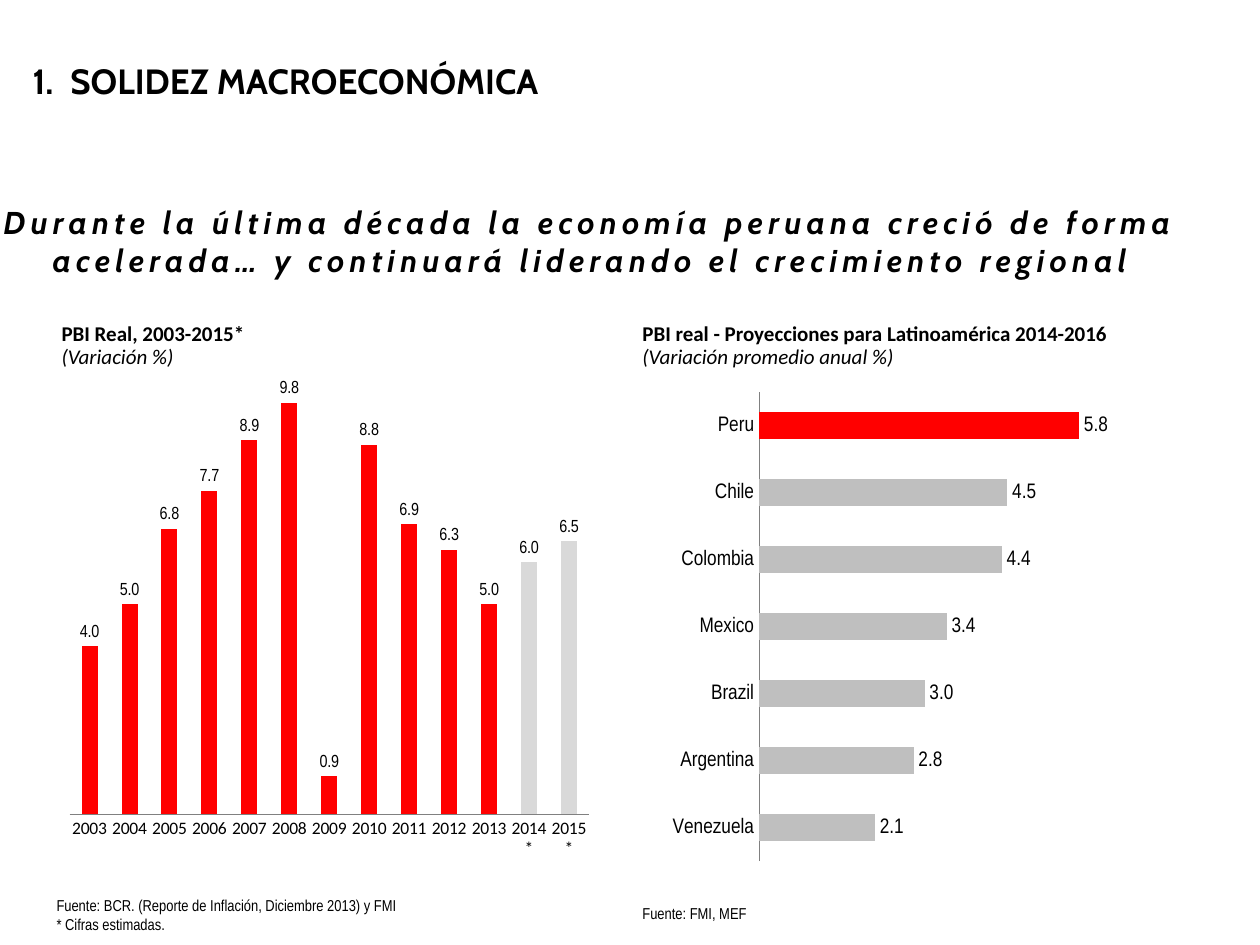
from lxml import etree
from pptx import Presentation
from pptx import util as u
from pptx.chart import data as chart_data
from pptx.dml.color import RGBColor
from pptx.enum import chart as ch, text
from pptx.oxml import ns

BLACK = RGBColor(0x00, 0x00, 0x00)
RED = RGBColor(0xFF, 0x00, 0x00)
LIGHT_GREY = RGBColor(0xD9, 0xD9, 0xD9)
MID_GREY = RGBColor(0xBF, 0xBF, 0xBF)
AXIS_GREY = RGBColor(0x80, 0x80, 0x80)

# Grid of 100 columns by 75 rows; every box is (column, row, columns, rows)
COLUMNS, ROWS = 100, 75
prs = Presentation()
prs.slide_width, prs.slide_height = u.Inches(10), u.Inches(7.5)


def place(box):
    col, row, cols, rows = box
    col_width, row_height = prs.slide_width / COLUMNS, prs.slide_height / ROWS
    return (u.Emu(round(col * col_width)), u.Emu(round(row * row_height)),
            u.Emu(round(cols * col_width)), u.Emu(round(rows * row_height)))


def inside(box, part):
    """Grid box of a part given relative to its region."""
    return (box[0] + part[0], box[1] + part[1], part[2], part[3])


def set_font(font, name, size, bold=False, italic=False):
    font.name, font.size = name, u.Pt(size)
    font.bold, font.italic = bold, italic
    font.color.rgb = BLACK


def add_lines(slide, box, lines, name, size, styles=((False, False),),
              line_spacing=None, grow=True):
    """Text box with one paragraph a line; styles are (bold, italic) by line."""
    frame = slide.shapes.add_textbox(*place(box)).text_frame
    frame.word_wrap = True
    frame.auto_size = (text.MSO_AUTO_SIZE.SHAPE_TO_FIT_TEXT if grow
                       else text.MSO_AUTO_SIZE.NONE)
    frame.text = "\n".join(lines)
    for i, paragraph in enumerate(frame.paragraphs):
        paragraph.line_spacing = line_spacing
        for run in paragraph.runs:
            set_font(run.font, name, size, *styles[i % len(styles)])
    return frame


def add_title(slide, box):
    frame = add_lines(slide, box, ["SOLIDEZ MACROECONÓMICA"], "Cabin", 20,
                      [(True, False)], grow=False)
    frame.vertical_anchor = text.MSO_ANCHOR.MIDDLE
    properties = frame.paragraphs[0]._p.get_or_add_pPr()
    indent = u.Inches(0.3)
    properties.set("marL", str(indent))
    properties.set("indent", str(-indent))
    numbering = etree.SubElement(properties, ns.qn("a:buAutoNum"))
    numbering.set("type", "arabicPeriod")


def add_message(slide, box):
    message = ("Durante la última década la economía peruana creció de forma "
               "acelerada… y continuará liderando el crecimiento regional")
    frame = add_lines(slide, box, [message], "Cabin", 18, [(True, True)])
    frame.vertical_anchor = text.MSO_ANCHOR.MIDDLE
    paragraph = frame.paragraphs[0]
    paragraph.alignment = text.PP_ALIGN.CENTER
    paragraph.runs[0].font._element.set("spc", "300")


def set_plot_layout(chart, shares):
    """Fix the inner plot area at x, y, w, h shares of the chart."""
    plot_area = chart._chartSpace.chart.plotArea
    for old in plot_area.findall(ns.qn("c:layout")):
        plot_area.remove(old)
    layout = etree.Element(ns.qn("c:layout"))
    manual = etree.SubElement(layout, ns.qn("c:manualLayout"))
    settings = [("layoutTarget", "inner"), ("xMode", "edge"), ("yMode", "edge"),
                *zip("xywh", shares)]
    for tag, value in settings:
        etree.SubElement(manual, ns.qn(f"c:{tag}")).set("val", str(value))
    plot_area.insert(0, layout)


def add_growth_chart(slide, box, kind, growth, size, maximum, color,
                     highlights, highlight_color, plot_shares, axis_font):
    values = chart_data.CategoryChartData(number_format="0.0")
    values.categories = list(growth)
    values.add_series("Series 1", list(growth.values()))
    chart = slide.shapes.add_chart(kind, *place(box), values).chart
    chart.has_legend = chart.has_title = False
    set_font(chart.font, "Arial Narrow", size)
    set_plot_layout(chart, plot_shares)

    # Axes
    chart.value_axis.visible = False
    chart.value_axis.has_major_gridlines = False
    chart.value_axis.minimum_scale = 0
    chart.value_axis.maximum_scale = maximum
    categories = chart.category_axis
    categories.major_tick_mark = ch.XL_TICK_MARK.NONE
    categories.format.line.color.rgb = AXIS_GREY
    categories.format.line.width = u.Pt(0.25)
    set_font(categories.tick_labels.font, axis_font, size)

    # Bars and their labels
    plot = chart.plots[0]
    plot.gap_width = 150
    plot.vary_by_categories = False
    series = plot.series[0]
    series.invert_if_negative = False
    series.format.fill.solid()
    series.format.fill.fore_color.rgb = color
    for name in highlights:
        fill = series.points[list(growth).index(name)].format.fill
        fill.solid()
        fill.fore_color.rgb = highlight_color
    labels = series.data_labels
    labels.show_value = True
    labels.number_format = "#,##0.0"
    labels.number_format_is_linked = False
    labels.position = ch.XL_LABEL_POSITION.OUTSIDE_END
    set_font(labels.font, "Arial Narrow", size)


def add_panel(slide, box, heading, heading_box, sources, source_box,
              chart_box, **chart_options):
    """Heading, chart and source note of one half of the slide."""
    add_growth_chart(slide, inside(box, chart_box), **chart_options)
    add_lines(slide, inside(box, heading_box), heading, "Calibri", 12,
              [(True, False), (False, True)], line_spacing=0.9)
    add_lines(slide, inside(box, source_box), sources, "Arial Narrow", 9)


def main():
    slide = prs.slides.add_slide(prs.slide_layouts[6])
    add_message(slide, (-1.2, 15.6, 96.1, 7.1))
    add_title(slide, (1.6, 2.5, 52.1, 7.7))

    # Growth of Peru by year
    years = [*range(2003, 2014), "2014*", "2015*"]
    rates = [4, 5, 6.8, 7.7, 8.9, 9.8, 0.9, 8.8, 6.9, 6.3, 5, 6, 6.5]
    add_panel(
        slide, (3.5, 25.2, 46.5, 49.8),
        ["PBI Real, 2003-2015*", "(Variación %)"], (0.4, 0, 45.3, 4.6),
        ["Fuente: BCR. (Reporte de Inflación, Diciembre 2013) y FMI",
         "* Cifras estimadas."], (0, 45.4, 49.2, 4),
        (1.6, 4.1, 42.5, 39.7), kind=ch.XL_CHART_TYPE.COLUMN_CLUSTERED,
        growth=dict(zip(map(str, years), rates)), size=10, maximum=10,
        color=RED, highlights=["2014*", "2015*"], highlight_color=LIGHT_GREY,
        plot_shares=(0.01, 0.05, 0.97, 0.84), axis_font="Calibri")

    # Projections by country
    projections = {"Venezuela": 2.1, "Argentina": 2.8, "Brazil": 3,
                   "Mexico": 3.4, "Colombia": 4.4, "Chile": 4.5, "Peru": 5.8}
    add_panel(
        slide, (50, 25.2, 50, 49.8),
        ["PBI real - Proyecciones para Latinoamérica 2014-2016",
         "(Variación promedio anual %)"], (0, 0, 46.9, 4.6),
        ["Fuente: FMI, MEF"], (0, 46, 49.2, 2.5),
        (1.6, 4.3, 39.3, 40.9), kind=ch.XL_CHART_TYPE.BAR_CLUSTERED,
        growth=projections, size=12, maximum=7,
        color=MID_GREY, highlights=["Peru"], highlight_color=RED,
        plot_shares=(0.22, 0.04, 0.78, 0.91), axis_font="Arial Narrow")

    prs.save("out.pptx")


if __name__ == "__main__":
    main()
